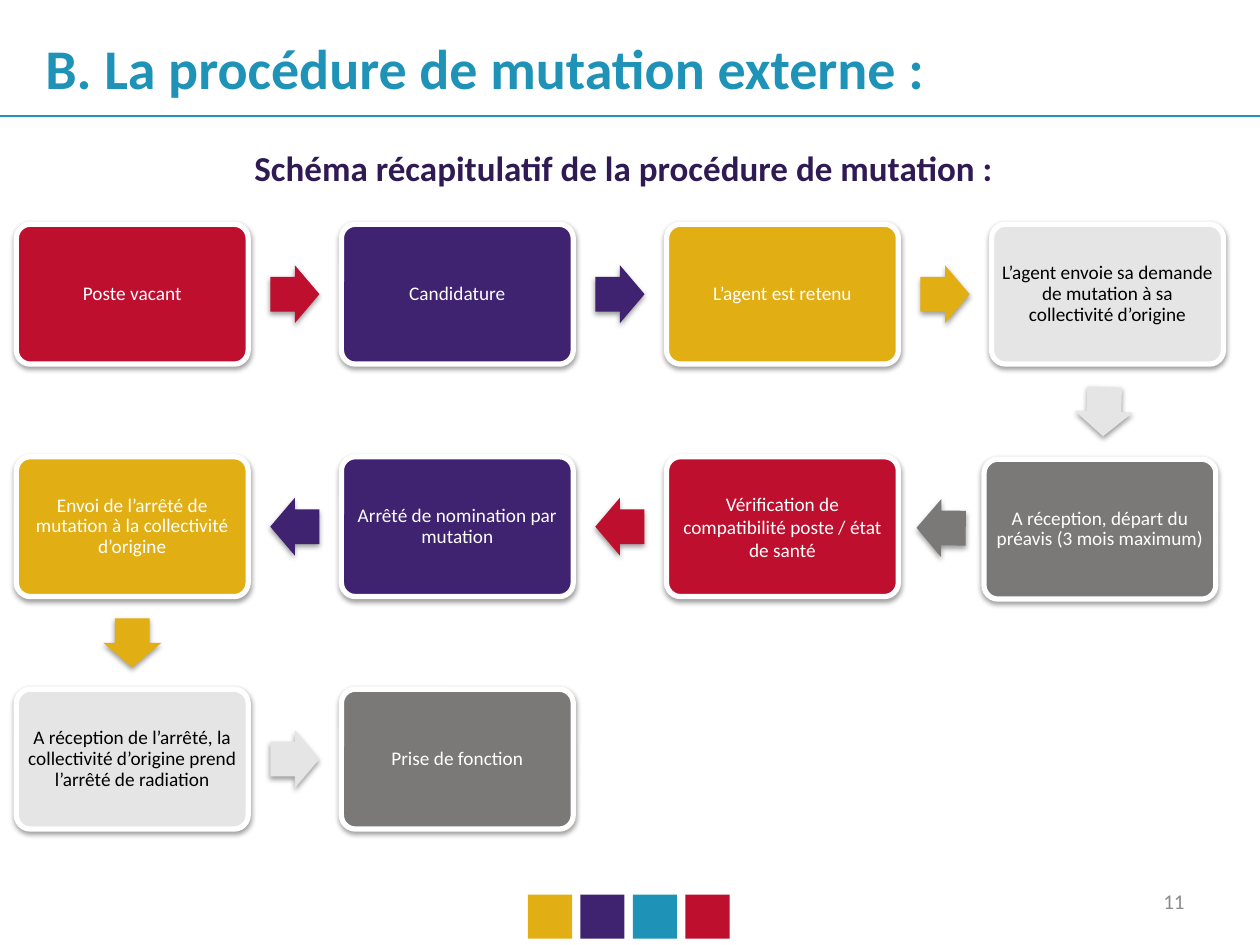
from dataclasses import dataclass
from math import atan2, degrees

from lxml import etree
from pptx import Presentation
from pptx.dml.color import RGBColor
from pptx.enum.shapes import MSO_CONNECTOR, MSO_SHAPE
from pptx.enum.text import MSO_ANCHOR, PP_ALIGN
from pptx.oxml import parse_xml
from pptx.oxml.ns import nsdecls, qn
from pptx.util import Inches, Pt

RECT = MSO_SHAPE.RECTANGLE
ROUNDED = MSO_SHAPE.ROUNDED_RECTANGLE
ARROW = MSO_SHAPE.RIGHT_ARROW
STRAIGHT = MSO_CONNECTOR.STRAIGHT
MIDDLE = MSO_ANCHOR.MIDDLE
LEFT, CENTER, RIGHT = PP_ALIGN.LEFT, PP_ALIGN.CENTER, PP_ALIGN.RIGHT


@dataclass(frozen=True)
class Theme:
    font: str = "Calibri"
    blue: str = "1F92B7"
    red: str = "BE0F2E"
    purple: str = "3F2270"
    gold: str = "E1AE13"
    light: str = "E6E5E5"
    gray: str = "7B7878"
    heading: str = "2F1A54"
    number: str = "8C8C8C"
    white: str = "FFFFFF"
    black: str = "000000"
    title_size: int = 32
    heading_size: int = 20
    number_size: int = 12
    step_size: int = 11


THEME = Theme()
SLIDE_W, SLIDE_H = 10, 7.5
COLUMNS = 4
COLUMN_PITCH, ROW_PITCH = 2.58, 1.845
STEP_W, STEP_H = 1.84, 1.11
ARROW_W, ARROW_H = 0.39, 0.46

STEP_FILLS = [THEME.red, THEME.purple, THEME.gold, THEME.light, THEME.gray]
STEPS = [
    "Poste vacant",
    "Candidature",
    "L’agent est retenu",
    "L’agent envoie sa demande de mutation à sa collectivité d’origine",
    "A réception, départ du préavis (3 mois maximum)",
    "Vérification de compatibilité poste / état de santé",
    "Arrêté de nomination par mutation",
    "Envoi de l’arrêté de mutation à la collectivité d’origine",
    "A réception de l’arrêté, la collectivité d’origine prend l’arrêté de radiation",
    "Prise de fonction",
]
NOTICE_STEP, NOTICE_SHIFT = 4, (-0.06, 0.02)
HEALTH_STEP = 5


def inches(box):
    return [Inches(length) for length in box]


def write(shape, text, size, color, align, bold=False, spacing=None):
    frame = shape.text_frame
    frame.word_wrap = True
    frame.vertical_anchor = MIDDLE
    frame.text = text
    paragraph = frame.paragraphs[0]
    paragraph.alignment = align
    if spacing:
        paragraph.line_spacing = spacing
    font = paragraph.runs[0].font
    font.name, font.size, font.bold = THEME.font, Pt(size), bold
    font.color.rgb = RGBColor.from_string(color)


def add_block(slide, kind, box, fill):
    block = slide.shapes.add_shape(kind, *inches(box))
    block.shadow.inherit = False
    block.fill.solid()
    block.fill.fore_color.rgb = RGBColor.from_string(fill)
    block.line.fill.background()
    return block


def cast_shadow(block):
    effects = block._element.spPr.find(qn("a:effectLst"))
    effects.append(parse_xml(
        f'<a:outerShdw {nsdecls("a")} blurRad="{Pt(3.1)}" dist="{Pt(1.6)}" '
        'dir="5400000" rotWithShape="0"><a:srgbClr val="000000">'
        '<a:alpha val="38000"/></a:srgbClr></a:outerShdw>'))


def add_title(slide, box):
    title = slide.shapes.title
    title.left, title.top, title.width, title.height = inches(box)
    write(title, "B. La procédure de mutation externe :",
          THEME.title_size, THEME.blue, LEFT, bold=True)


def add_title_rule(slide, left, right, y):
    rule = slide.shapes.add_connector(STRAIGHT, *inches((left, y, right, y)))
    rule.line.color.rgb = RGBColor.from_string(THEME.blue)
    rule.line.width = Pt(1.5)
    etree.SubElement(rule._element.spPr, qn("a:effectLst"))


def add_label(slide, box, *style, **options):
    write(slide.shapes.add_textbox(*inches(box)), *style, **options)


def add_color_squares(slide, box):
    left, top, width, side = box
    fills = [THEME.gold, THEME.purple, THEME.blue, THEME.red]
    pitch = (width - side) / (len(fills) - 1)
    for index, fill in enumerate(fills):
        add_block(slide, RECT, (left + index * pitch, top, side, side), fill)


def step_center(index, left, top):
    """Rows run alternately to the right and to the left."""
    row, column = divmod(index, COLUMNS)
    if row % 2:
        column = COLUMNS - 1 - column
    dx, dy = NOTICE_SHIFT if index == NOTICE_STEP else (0, 0)
    return (left + column * COLUMN_PITCH + STEP_W / 2 + dx,
            top + row * ROW_PITCH + STEP_H / 2 + dy)


def add_step(slide, center, text, fill, spacing):
    x, y = center
    step = add_block(slide, ROUNDED,
                     (x - STEP_W / 2, y - STEP_H / 2, STEP_W, STEP_H), fill)
    step.adjustments[0] = 0.1
    step.line.color.rgb = RGBColor.from_string(THEME.white)
    step.line.width = Pt(3)
    cast_shadow(step)
    frame = step.text_frame
    frame.margin_left = frame.margin_right = Inches(0.05)
    frame.margin_top = frame.margin_bottom = Inches(0.05)
    ink = THEME.black if fill == THEME.light else THEME.white
    write(step, text, THEME.step_size, ink, CENTER, spacing=spacing)


def add_step_arrow(slide, start, end, fill):
    """Halfway between two steps, turned towards the second one."""
    x, y = (start[0] + end[0]) / 2, (start[1] + end[1]) / 2
    arrow = add_block(slide, ARROW,
                      (x - ARROW_W / 2, y - ARROW_H / 2, ARROW_W, ARROW_H), fill)
    arrow.adjustments[0], arrow.adjustments[1] = 0.6, 0.5
    arrow.rotation = degrees(atan2(end[1] - start[1], end[0] - start[0])) % 360
    cast_shadow(arrow)


def add_procedure(slide, left, top):
    centers = [step_center(index, left, top) for index in range(len(STEPS))]
    for index, text in enumerate(STEPS):
        fill = STEP_FILLS[index % len(STEP_FILLS)]
        spacing = 1.0 if index == HEALTH_STEP else 0.9
        add_step(slide, centers[index], text, fill, spacing)
        if index + 1 < len(STEPS):
            add_step_arrow(slide, centers[index], centers[index + 1], fill)


def main():
    deck = Presentation()
    deck.slide_width, deck.slide_height = Inches(SLIDE_W), Inches(SLIDE_H)
    slide = deck.slides.add_slide(deck.slide_layouts[5])

    # Header
    add_title(slide, (0.26, 0.21, 9.23, 0.64))
    add_title_rule(slide, 0, SLIDE_W, 0.92)
    add_label(slide, (0.15, 1.11, 9.6, 0.44),
              "Schéma récapitulatif de la procédure de mutation :",
              THEME.heading_size, THEME.heading, CENTER, bold=True)

    # Procedure steps
    add_procedure(slide, 0.13, 1.78)

    # Footer
    add_color_squares(slide, (4.19, 7.1, 1.6, 0.35))
    add_label(slide, (7.17, 6.95, 2.33, 0.4), "11",
              THEME.number_size, THEME.number, RIGHT)

    deck.save("out.pptx")


if __name__ == "__main__":
    main()
